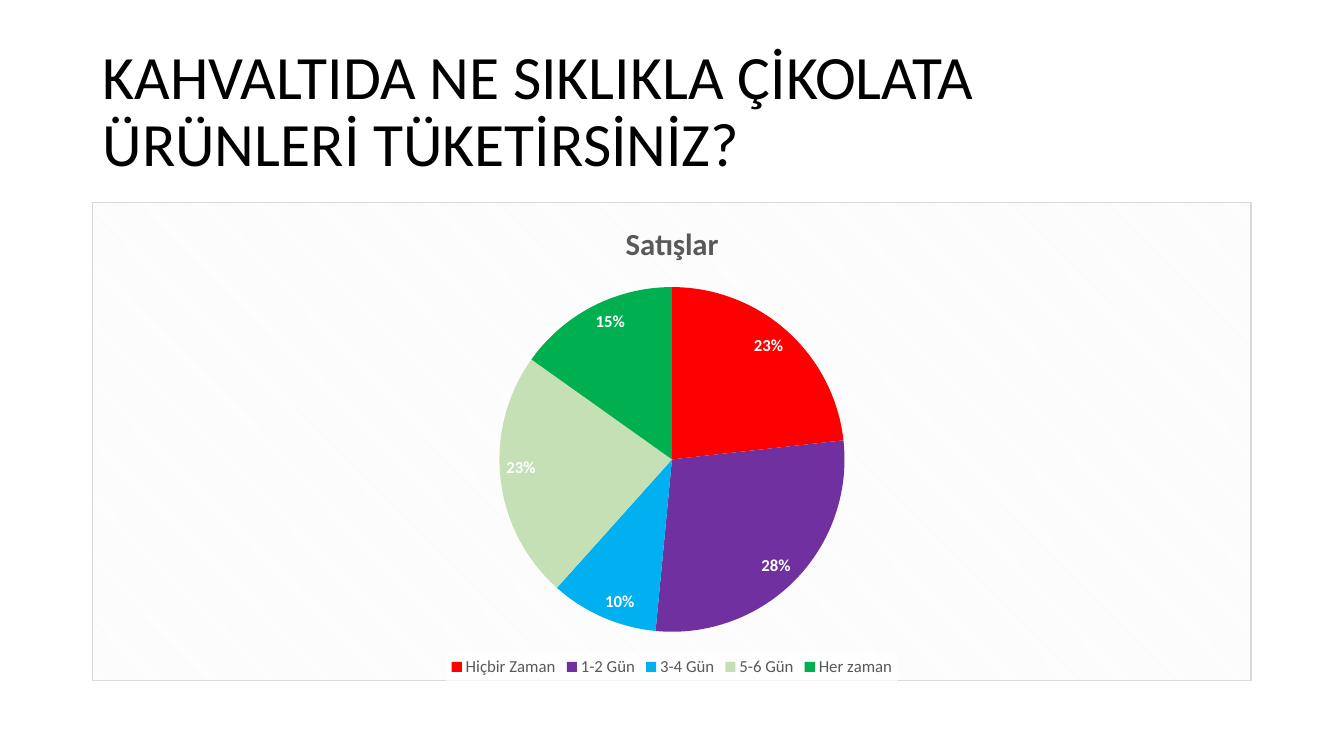
import lxml.etree
import pptx
import pptx.chart.data
import pptx.dml.color
import pptx.enum.chart
import pptx.enum.text
import pptx.oxml
import pptx.oxml.ns
import pptx.util
from pptx.util import Cm

RGBColor = pptx.dml.color.RGBColor
BLACK = RGBColor(0x00, 0x00, 0x00)
WHITE = RGBColor(0xFF, 0xFF, 0xFF)
GREY_TEXT = RGBColor(0x59, 0x59, 0x59)
BORDER_GREY = RGBColor(0xD9, 0xD9, 0xD9)
STRIPE_GREY = RGBColor(0xF2, 0xF2, 0xF2)
RED = RGBColor(0xFF, 0x00, 0x00)
PURPLE = RGBColor(0x70, 0x30, 0xA0)
BLUE = RGBColor(0x00, 0xB0, 0xF0)
PALE_GREEN = RGBColor(0xC5, 0xE0, 0xB4)
GREEN = RGBColor(0x00, 0xB0, 0x50)

FONT = "Calibri"
LEFT, WIDTH = Cm(2.33), Cm(29.21)
ANSWERS = [
    ("Hiçbir Zaman", 23, RED),
    ("1-2 Gün", 28, PURPLE),
    ("3-4 Gün", 10, BLUE),
    ("5-6 Gün", 23, PALE_GREEN),
    ("Her zaman", 15, GREEN),
]


def set_font(font, size, color, bold=False):
    font.name = FONT
    font.size = pptx.util.Pt(size)
    font.color.rgb = color
    font.bold = bold


def add_question(slide, text):
    question = slide.shapes.title
    question.left, question.top = LEFT, Cm(1.01)
    question.width, question.height = WIDTH, Cm(3.68)
    frame = question.text_frame
    frame.text = text
    frame.word_wrap = True
    frame.auto_size = pptx.enum.text.MSO_AUTO_SIZE.NONE
    frame.vertical_anchor = pptx.enum.text.MSO_ANCHOR.MIDDLE
    paragraph = frame.paragraphs[0]
    paragraph.alignment = pptx.enum.text.PP_ALIGN.LEFT
    paragraph.line_spacing = 0.9
    set_font(paragraph.font, 44, BLACK)


def style_background(chart):
    """Give the chart area its striped fill and thin border."""
    area = pptx.oxml.parse_xml(
        f'<c:spPr {pptx.oxml.ns.nsdecls("c", "a")}>'
        '<a:pattFill prst="dkDnDiag">'
        f'<a:fgClr><a:srgbClr val="{STRIPE_GREY}"/></a:fgClr>'
        f'<a:bgClr><a:srgbClr val="{WHITE}"/></a:bgClr></a:pattFill>'
        f'<a:ln w="{pptx.util.Pt(0.75)}"><a:solidFill>'
        f'<a:srgbClr val="{BORDER_GREY}"/></a:solidFill></a:ln></c:spPr>'
    )
    chart.element.find(pptx.oxml.ns.qn("c:chart")).addnext(area)


def style_legend(chart):
    chart.has_legend = True
    legend = chart.legend
    legend.position = pptx.enum.chart.XL_LEGEND_POSITION.BOTTOM
    legend.include_in_layout = False
    set_font(legend.font, 12, GREY_TEXT)
    background = pptx.oxml.parse_xml(
        f'<c:spPr {pptx.oxml.ns.nsdecls("c", "a")}><a:solidFill>'
        f'<a:srgbClr val="{WHITE}"><a:alpha val="78000"/></a:srgbClr>'
        '</a:solidFill></c:spPr>'
    )
    chart.element.find(".//" + pptx.oxml.ns.qn("c:legend")).find(
        pptx.oxml.ns.qn("c:txPr")).addprevious(background)


def add_answer_pie(slide, name):
    answers = pptx.chart.data.CategoryChartData()
    answers.categories = [label for label, _, _ in ANSWERS]
    answers.add_series(name, [value for _, value, _ in ANSWERS])
    chart = slide.shapes.add_chart(
        pptx.enum.chart.XL_CHART_TYPE.PIE,
        LEFT, Cm(5.08), WIDTH, Cm(12.09), answers).chart
    set_font(chart.font, 10, BLACK)

    # Chart title
    chart.has_title = True
    heading = chart.chart_title.text_frame
    heading.text = name
    set_font(heading.paragraphs[0].font, 22, GREY_TEXT, bold=True)

    # Slices
    pie = chart.plots[0]
    pie.vary_by_categories = True
    for index, (_, _, color) in enumerate(ANSWERS):
        fill = pie.series[0].points[index].format.fill
        fill.solid()
        fill.fore_color.rgb = color

    # Percentages
    percentages = pie.series[0].data_labels
    percentages.show_percentage = True
    percentages.show_value = False
    percentages.number_format = "0%"
    percentages.number_format_is_linked = False
    percentages.position = pptx.enum.chart.XL_LABEL_POSITION.INSIDE_END
    set_font(percentages.font, 12, WHITE, bold=True)

    style_legend(chart)
    style_background(chart)


def main():
    presentation = pptx.Presentation()
    presentation.slide_width = Cm(33.87)
    presentation.slide_height = Cm(19.05)
    title_only = presentation.slide_layouts[5]
    slide = presentation.slides.add_slide(title_only)
    add_question(slide, "KAHVALTIDA NE SIKLIKLA ÇİKOLATA ÜRÜNLERİ TÜKETİRSİNİZ?")
    add_answer_pie(slide, "Satışlar")
    presentation.save("out.pptx")


if __name__ == "__main__":
    main()
